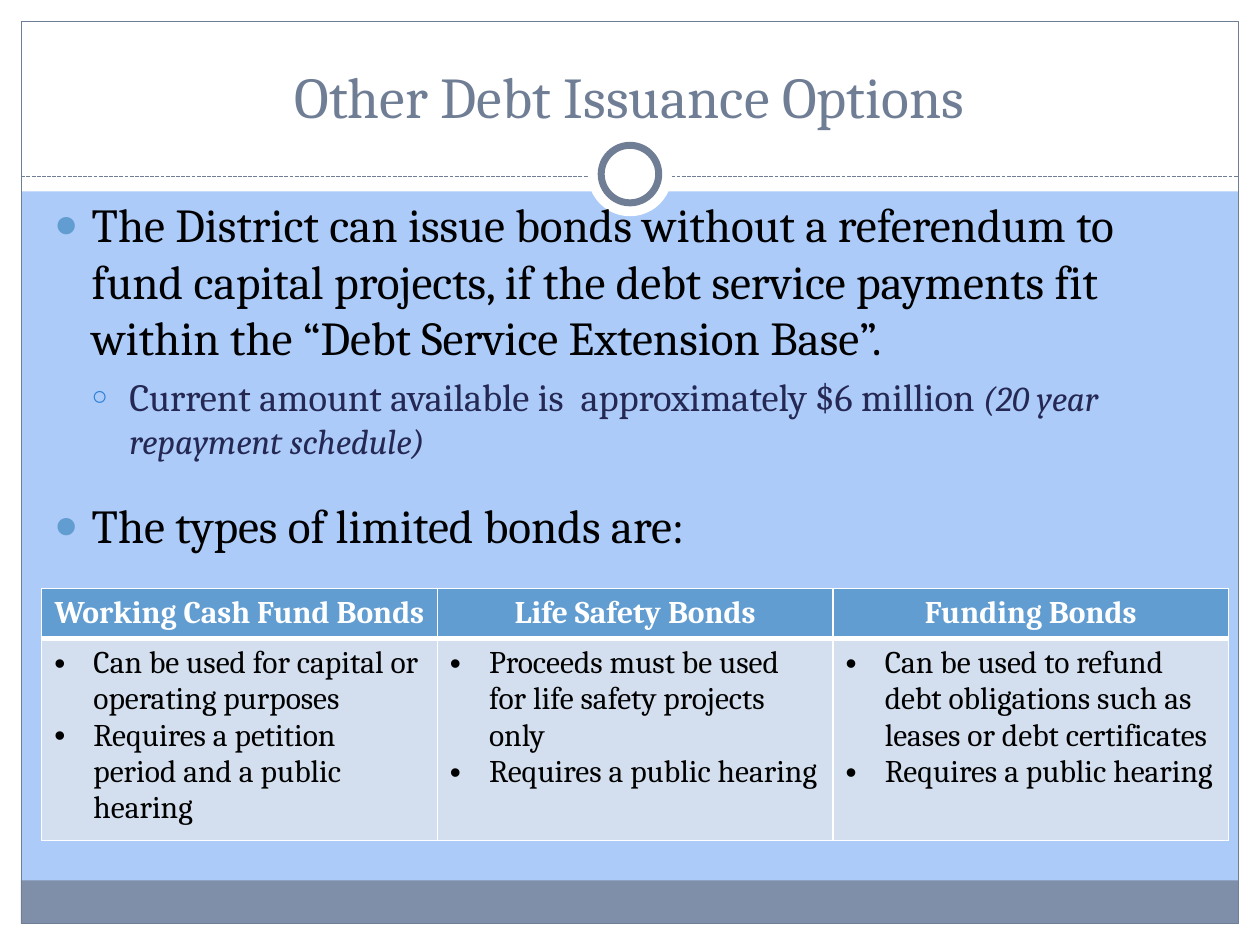
from dataclasses import dataclass

from lxml.etree import SubElement
from pptx import Presentation
from pptx.dml.color import RGBColor
from pptx.enum.dml import MSO_LINE
from pptx.enum.shapes import MSO_CONNECTOR, MSO_SHAPE
from pptx.enum.text import MSO_ANCHOR, MSO_AUTO_SIZE, PP_ALIGN
from pptx.oxml import parse_xml
from pptx.oxml.ns import nsdecls, qn
from pptx.util import Cm, Pt


@dataclass(frozen=True)
class Theme:
    """Colours, font and type sizes of the slide."""
    face: str = "Cambria"
    back: str = "ACCBF9"
    white: str = "FFFFFF"
    black: str = "000000"
    slate: str = "707E95"
    band: str = "7F8FA9"
    blue: str = "629DD1"
    ring: str = "297FD5"
    navy: str = "242852"
    pale: str = "D3DFEE"
    title: int = 33
    main: int = 27
    sub: int = 22
    note: int = 20
    cell: int = 18


class Deck:
    """Holds the theme and the current slide."""

    def __init__(self, theme):
        """Start a one-slide deck with a plain background."""
        self.theme = theme
        self.file = Presentation()
        self.file.slide_width, self.file.slide_height = Cm(25.4), Cm(19.05)
        self.slide = self.file.slides.add_slide(self.file.slide_layouts[5])
        self.paint(self.slide.background.fill, theme.back)

    def paint(self, fill, color):
        """Make a fill solid."""
        fill.solid()
        fill.fore_color.rgb = RGBColor.from_string(color)

    def style(self, font, size, color, bold=False):
        """Set face, size, colour and weight."""
        font.name, font.size, font.bold = self.theme.face, Pt(size), bold
        font.color.rgb = RGBColor.from_string(color)

    def shape(self, kind, box, fill=None, line=None, width=0.75):
        """Add a preset shape; box is in centimetres."""
        item = self.slide.shapes.add_shape(kind, *map(Cm, box))
        item.shadow.inherit = False
        if fill:
            self.paint(item.fill, fill)
        else:
            item.fill.background()
        if line:
            self.paint(item.line.fill, line)
            item.line.width = Pt(width)
        else:
            item.line.fill.background()

    def rule(self, left, right, top):
        """Add a dashed level line."""
        line = self.slide.shapes.add_connector(
            MSO_CONNECTOR.STRAIGHT, Cm(left), Cm(top), Cm(right), Cm(top))
        self.paint(line.line.fill, self.theme.slate)
        line.line.width = Pt(0.75)
        line.line.dash_style = MSO_LINE.SQUARE_DOT
        SubElement(line._element.spPr, qn("a:effectLst"))

    def title(self, text, box):
        """Place the title above the frame."""
        item = self.slide.shapes.title
        item.left, item.top, item.width, item.height = map(Cm, box)
        self.slide.shapes._spTree.append(item._element)
        frame = item.text_frame
        frame.text = text
        frame.auto_size = MSO_AUTO_SIZE.NONE
        frame.vertical_anchor = MSO_ANCHOR.BOTTOM
        para = frame.paragraphs[0]
        para.alignment = PP_ALIGN.CENTER
        self.style(para.font, self.theme.title, self.theme.slate)

    def bullet(self, para, mark, color, indent, hang, scale=100):
        """Give a paragraph a bullet and a hanging indent."""
        props = para._p.get_or_add_pPr()
        props.set("marL", str(Cm(indent)))
        props.set("indent", str(-Cm(hang)))
        tint = SubElement(props, qn("a:buClr"))
        SubElement(tint, qn("a:srgbClr"), val=color)
        SubElement(props, qn("a:buSzPct"), val=str(scale * 1000))
        SubElement(props, qn("a:buFont"), typeface="Arial")
        SubElement(props, qn("a:buChar"), char=mark)

    def body(self, box, points):
        """Add bulleted text; points are (level, gap, text, note)."""
        look = self.theme
        levels = [("●", look.blue, 85, look.main, look.black),
                  ("○", look.ring, 70, look.sub, look.navy)]
        frame = self.slide.shapes.add_textbox(*map(Cm, box)).text_frame
        frame.word_wrap = True
        for num, (level, gap, text, note) in enumerate(points):
            para = frame.add_paragraph() if num else frame.paragraphs[0]
            mark, tint, scale, size, color = levels[level]
            para.space_before = Pt(gap)
            self.bullet(para, mark, tint, 0.76 * (level + 1), 0.76, scale)
            self.style(para.font, size, color)
            para.add_run().text = text
            if note:
                run = para.add_run()
                run.text = note
                run.font.size, run.font.italic = Pt(look.note), True

    def edge(self, cell, base):
        """Draw white borders; base is the bottom width in points."""
        props = cell._tc.get_or_add_tcPr()
        for num, (side, width) in enumerate(zip("LRTB", (1, 1, 1, base))):
            props.insert(num, parse_xml(
                f'<a:ln{side} {nsdecls("a")} w="{Pt(width)}"><a:solidFill>'
                f'<a:srgbClr val="{self.theme.white}"/></a:solidFill></a:ln{side}>'))

    def table(self, box, rows, groups):
        """Add a table with one headed bullet list per column."""
        look = self.theme
        grid = self.slide.shapes.add_table(
            2, len(groups), *map(Cm, box)).table
        for row, height in zip(grid.rows, rows):
            row.height = Cm(height)
        for col, (head, points) in enumerate(groups):
            top, low = grid.cell(0, col), grid.cell(1, col)
            top.text, low.text = head, "\n".join(points)
            para = top.text_frame.paragraphs[0]
            para.alignment = PP_ALIGN.CENTER
            self.style(para.font, look.cell, look.white, True)
            for para in low.text_frame.paragraphs:
                self.bullet(para, "•", look.black, 0.79, 0.79)
                self.style(para.font, look.cell, look.black)
            for cell, fill, base in ((top, look.blue, 3), (low, look.pale, 1)):
                self.paint(cell.fill, fill)
                self.edge(cell, base)


def main():
    """Build and save the slide."""
    look = Theme()
    deck = Deck(look)
    rect, oval = MSO_SHAPE.RECTANGLE, MSO_SHAPE.OVAL
    for box in ((0, 18.62, 25.4, 0.43), (0, 0, 25.4, 3.86),
                (0, 0, 0.43, 19.05), (24.97, 0, 0.43, 19.05)):
        deck.shape(rect, box, look.white)
    deck.shape(rect, (0.42, 17.75, 24.55, 0.87), look.band)
    deck.shape(rect, (0.43, 0.43, 24.54, 18.19), line=look.slate)
    deck.rule(0.43, 24.97, 3.56)
    deck.shape(oval, (11.85, 2.66, 1.7, 1.7), look.white)
    deck.shape(oval, (12.12, 2.93, 1.16, 1.16), look.white, look.slate, 4)
    deck.title("Other Debt Issuance Options", (0.84, 0.64, 23.7, 2.1))
    deck.body((0.84, 3.81, 23.62, 14.8), [
        (0, 5.4, "The District can issue bonds without a referendum to fund "
         "capital projects, if the debt service payments fit within the "
         "“Debt Service Extension Base”.", ""),
        (1, 4.4, "Current amount available is  approximately $6 million ",
         "(20 year repayment schedule)"),
        (0, 20, "The types of limited bonds are:", "")])
    hearing = "Requires a public hearing"
    deck.table((0.84, 11.86, 23.93, 4.9), (0.98, 3.92), [
        ("Working Cash Fund Bonds",
         ["Can be used for capital or operating purposes",
          "Requires a petition period and a public hearing"]),
        ("Life Safety Bonds",
         ["Proceeds must be used for life safety projects only", hearing]),
        ("Funding Bonds",
         ["Can be used to refund debt obligations such as leases or debt "
          "certificates", hearing])])
    deck.file.save("out.pptx")


if __name__ == "__main__":
    main()
